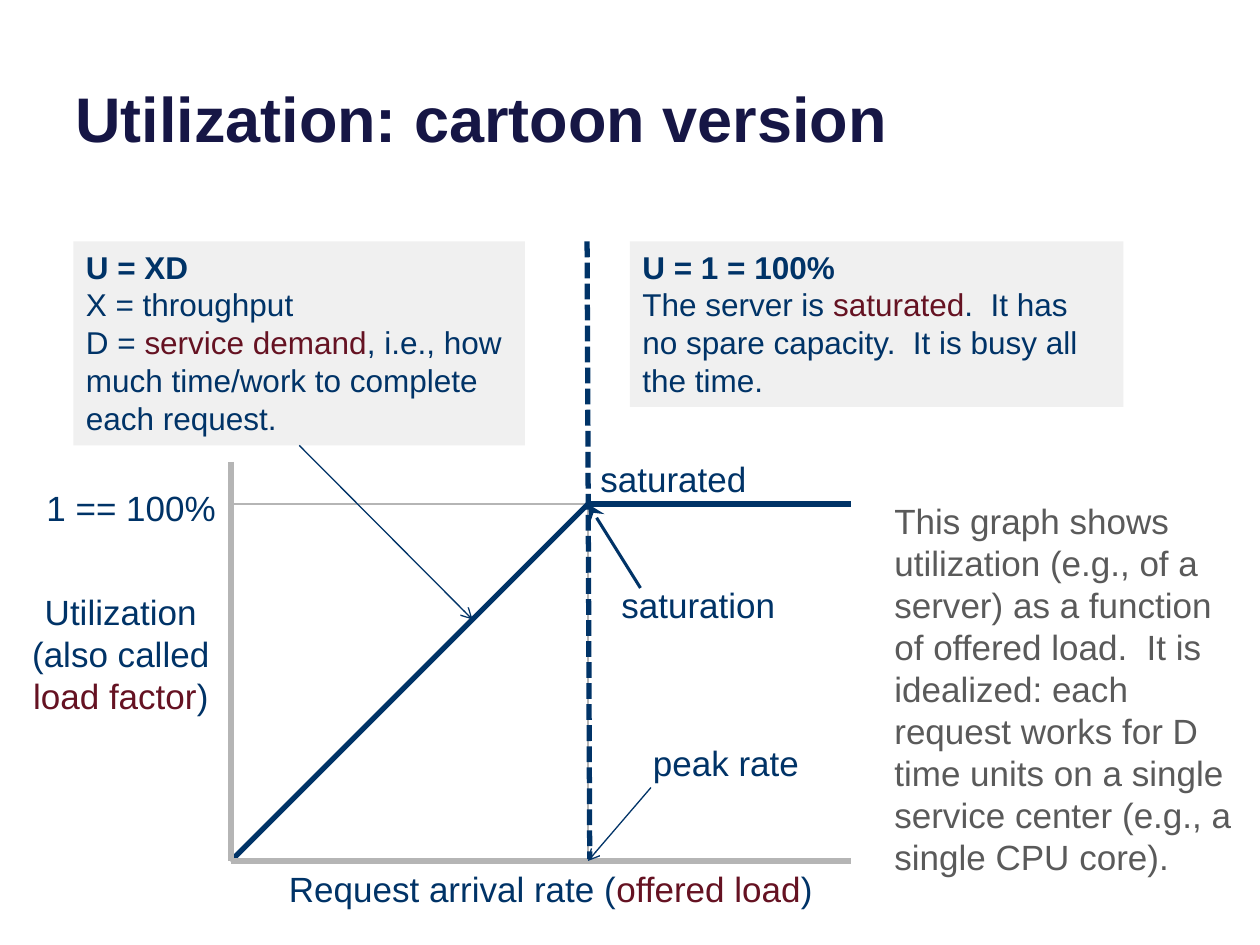
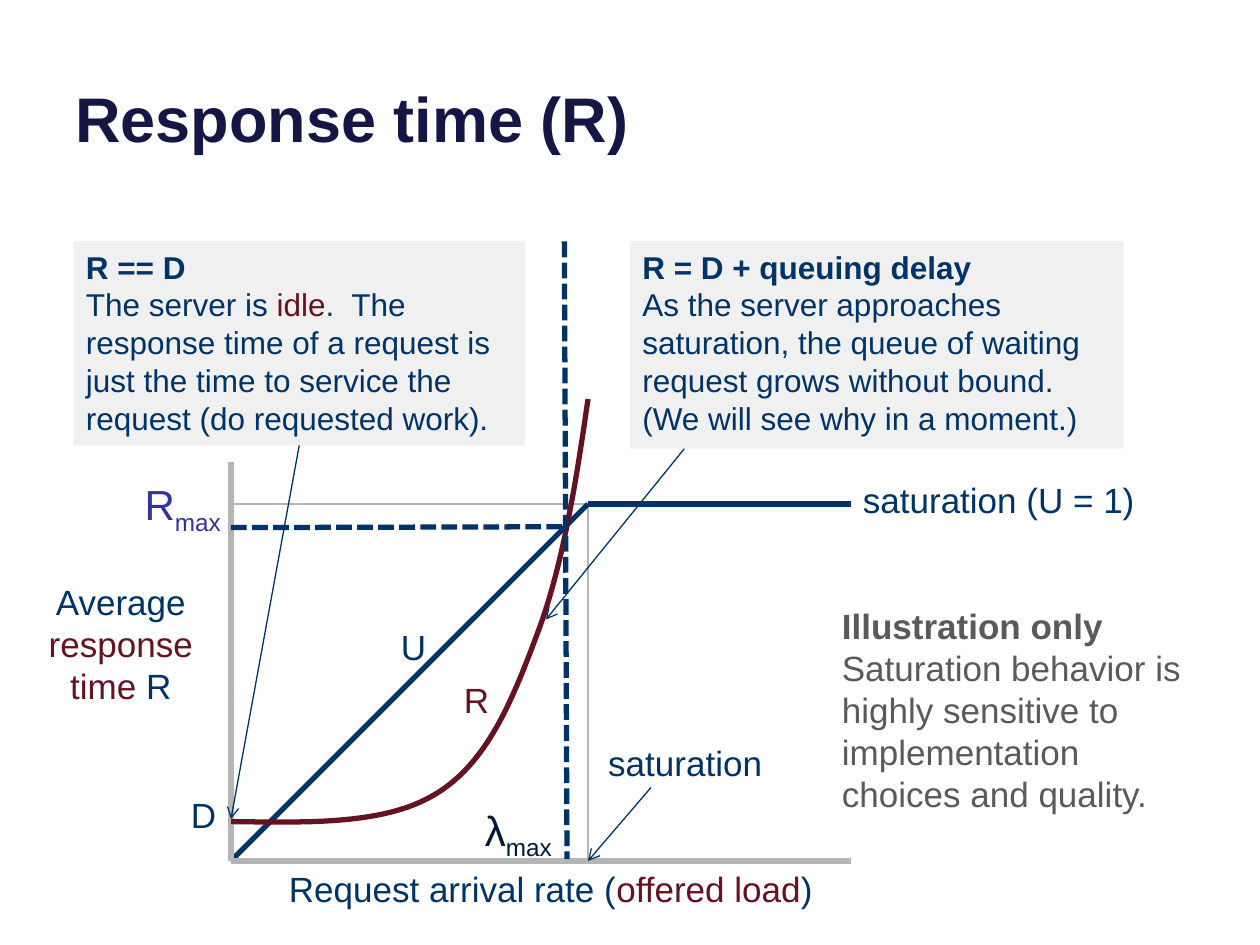
from lxml.etree import SubElement
from pptx import Presentation
from pptx.dml.color import RGBColor
from pptx.enum.dml import MSO_LINE
from pptx.enum.shapes import MSO_CONNECTOR, MSO_SHAPE
from pptx.enum.text import MSO_ANCHOR, MSO_AUTO_SIZE, PP_ALIGN
from pptx.oxml.ns import qn
from pptx.util import Pt

FONT = "Arial"
NAVY, RED, INK, DARK = "003367", "651222", "161645", "001934"
GRAY, AXIS, PALE, WHITE, VIOLET = "5A5A5A", "B5B5B5", "F0F0F0", "FFFFFF", "333399"
LEFT, RIGHT, TOP, BASE, PEAK = 132, 486, 288, 492, 336
HEAD = 138


def rgb(code):
    """Turn a hex string into a colour."""
    return RGBColor.from_string(code)


def ink(text, hue=NAVY, bold=False, sub=False):
    """Describe one run of text."""
    return text, hue, bold, sub


def write(shape, paras, size, align=PP_ALIGN.LEFT, wrap=True):
    """Fill a shape with paragraphs, run by run."""
    frame = shape.text_frame
    frame.word_wrap = wrap
    frame.auto_size = MSO_AUTO_SIZE.SHAPE_TO_FIT_TEXT
    frame.vertical_anchor = MSO_ANCHOR.TOP
    for i, runs in enumerate(paras):
        para = frame.paragraphs[0] if i == 0 else frame.add_paragraph()
        para.alignment = align
        for text, hue, bold, sub in runs:
            run = para.add_run()
            run.text = text
            font = run.font
            font.name, font.size, font.bold = FONT, Pt(size), bold
            font.color.rgb = rgb(hue)
            if sub:
                run._r.get_or_add_rPr().set("baseline", "-25000")


def label(slide, box, *paras, size=20, align=PP_ALIGN.LEFT, wrap=False):
    """Add a text box; box is left, top, width, height."""
    shape = slide.shapes.add_textbox(*map(Pt, box))
    write(shape, paras, size, align, wrap)
    return shape


def title(slide, text):
    """Add the slide title, resting on its bottom edge."""
    shape = label(slide, (36, 20, 648, 72), [ink(text, INK, True)], size=36, wrap=True)
    shape.text_frame.auto_size = MSO_AUTO_SIZE.NONE
    shape.text_frame.vertical_anchor = MSO_ANCHOR.BOTTOM


def panel(slide, box, *paras, fill=PALE, size=18):
    """Add a filled rectangle with text."""
    shape = slide.shapes.add_shape(MSO_SHAPE.RECTANGLE, *map(Pt, box))
    shape.shadow.inherit = False
    shape.fill.solid()
    shape.fill.fore_color.rgb = rgb(fill)
    shape.line.fill.background()
    write(shape, paras, size)
    return shape


def line(slide, start, end, width=3, hue=NAVY, dash=False, tip=None, source=None):
    """Draw a straight line, with an optional tip and a source panel."""
    link = slide.shapes.add_connector(
        MSO_CONNECTOR.STRAIGHT, *map(Pt, (*start, *end)))
    if source is not None:
        link.begin_connect(source, 2)
    link.line.color.rgb = rgb(hue)
    link.line.width = Pt(width)
    if dash:
        link.line.dash_style = MSO_LINE.SQUARE_DOT
    props = link._element.spPr
    if tip:
        SubElement(props.find(qn("a:ln")), qn("a:tailEnd"), tip)
    SubElement(props, qn("a:effectLst"))


def arrow(slide, start, end, source=None):
    """Draw a thin pointer with an open tip."""
    line(slide, start, end, 0.75, tip={"type": "arrow"}, source=source)


def bend(a, b, c, d, steps=24):
    """List points along a cubic curve, without its start."""
    points = []
    for i in range(1, steps + 1):
        t = i / steps
        u = 1 - t
        points.append(tuple(
            Pt(u**3 * p + 3 * u * u * t * q + 3 * u * t * t * r + t**3 * s)
            for p, q, r, s in zip(a, b, c, d)))
    return points


def curve(slide, knots, hue):
    """Draw an open smooth curve through groups of control points."""
    pen = slide.shapes.build_freeform(*map(Pt, knots[0]))
    for i in range(0, len(knots) - 1, 3):
        pen.add_line_segments(bend(*knots[i:i + 4]), close=False)
    shape = pen.convert_to_shape()
    shape.shadow.inherit = False
    shape.fill.background()
    shape.line.color.rgb = rgb(hue)
    shape.line.width = Pt(3)


def graph(slide):
    """Draw the axes, the load line and the saturation guide."""
    guide = slide.shapes.add_shape(
        MSO_SHAPE.RECTANGLE, *map(Pt, (LEFT, TOP, PEAK - LEFT, BASE - TOP)))
    guide.shadow.inherit = False
    guide.fill.background()
    guide.line.color.rgb = rgb(AXIS)
    guide.line.width = Pt(1.5)
    line(slide, (PEAK, TOP), (RIGHT, TOP))
    line(slide, (LEFT, BASE), (PEAK, TOP))
    line(slide, (LEFT, 264), (LEFT, BASE), hue=AXIS)
    line(slide, (RIGHT, BASE), (LEFT, BASE), hue=AXIS)
    arrow(slide, (372, 450), (PEAK, BASE))
    label(slide, (158, BASE, 316, 31.5),
          [ink("Request arrival rate ("), ink("offered load", RED), ink(")")])


def usage(slide):
    """Build the utilization slide."""
    title(slide, "Utilization: cartoon version")
    graph(slide)
    line(slide, (335.5, HEAD), (337, 491), dash=True)
    law = panel(slide, (42, HEAD, 258, 116.5),
                [ink("U = XD", bold=True)],
                [ink("X = throughput")],
                [ink("D = "), ink("service demand", RED),
                 ink(", i.e., how much time/work to complete each request.")])
    panel(slide, (360, HEAD, 282, 94.5),
          [ink("U = 1 = 100%", bold=True)],
          [ink("The server is "), ink("saturated", RED),
           ink(".  It has no spare capacity.  It is busy all the time.")])
    arrow(slide, (171, 254.5), (270, 354), law)
    line(slide, (366, 336), (PEAK, TOP), 1.75,
         tip={"type": "stealth", "w": "lg", "len": "lg"})
    label(slide, (336, 258, 99, 31.5), [ink("saturated")])
    label(slide, (348, 330, 103, 31.5), [ink("saturation")])
    label(slide, (366, 420, 102, 31.5), [ink("peak rate")], wrap=True)
    label(slide, (12, 274.5, 126, 31.5), [ink("1 == 100%")],
          align=PP_ALIGN.CENTER, wrap=True)
    label(slide, (6, 334, 126, 80), [ink("Utilization")],
          [ink("(also called "), ink("load factor", RED), ink(")")],
          align=PP_ALIGN.CENTER, wrap=True)
    label(slide, (504, 282, 216, 225),
          [ink("This graph shows utilization (e.g., of a server) as a function of "
               "offered load.  It is idealized: each request works for D time units "
               "on a single service center (e.g., a single CPU core).", GRAY)],
          wrap=True)


def delay(slide):
    """Build the response time slide."""
    title(slide, "Response time (R)")
    graph(slide)
    panel(slide, (474, 342, 222, 128),
          [ink("Illustration only", GRAY, True)],
          [ink("Saturation behavior is highly sensitive to implementation choices "
               "and quality.", GRAY)], fill=WHITE, size=20)
    curve(slide, [(132, 469.5), (175.5, 470), (219.5, 471.5), (248.5, 454),
                  (278, 436.5), (292.5, 401), (306.5, 363.5),
                  (321, 326), (329, 277), (336, 228)], RED)
    idle = panel(slide, (42, HEAD, 258, 116.5),
                 [ink("R == D", bold=True)],
                 [ink("The server is "), ink("idle", RED),
                  ink(".  The response time of a request is just the time to "
                      "service the request (do requested work).")])
    panel(slide, (360, HEAD, 282, 118.5),
          [ink("R = D + queuing delay", bold=True)],
          [ink("As the server approaches saturation, the queue of waiting request "
               "grows without bound.")],
          [ink("(We will see why in a moment.)")])
    arrow(slide, (171, 254.5), (LEFT, 468), idle)
    arrow(slide, (391, HEAD + 118.5), (312, 354))
    line(slide, (322.5, HEAD), (324, 491), dash=True)
    line(slide, (LEFT, 301.5), (324, 301), dash=True)
    label(slide, (340.5, 420, 103, 31.5), [ink("saturation")])
    label(slide, (486, 270, 171, 31.5), [ink("saturation (U = 1)")])
    for name, hue, x, y in (("U", NAVY, 222, 354), ("R", RED, 258, 384),
                            ("D", NAVY, 102, 450)):
        label(slide, (x, y, 29, 31.5), [ink(name, hue)])
    for name, hue, x, y, width in (("R", VIOLET, 75.5, 270, 62.5),
                                   ("λ", DARK, 270, 456, 58.5)):
        label(slide, (x, y, width, 36),
              [ink(name, hue), ink("max", hue, sub=True)], size=24)
    label(slide, (6, 328, 126, 80),
          [ink("Average "), ink("response time ", RED), ink("R")],
          align=PP_ALIGN.CENTER, wrap=True)


def main():
    """Build both slides and save them."""
    deck = Presentation()
    deck.slide_width, deck.slide_height = Pt(720), Pt(540)
    for build in (usage, delay):
        build(deck.slides.add_slide(deck.slide_layouts[6]))
    deck.save("out.pptx")


if __name__ == "__main__":
    main()
